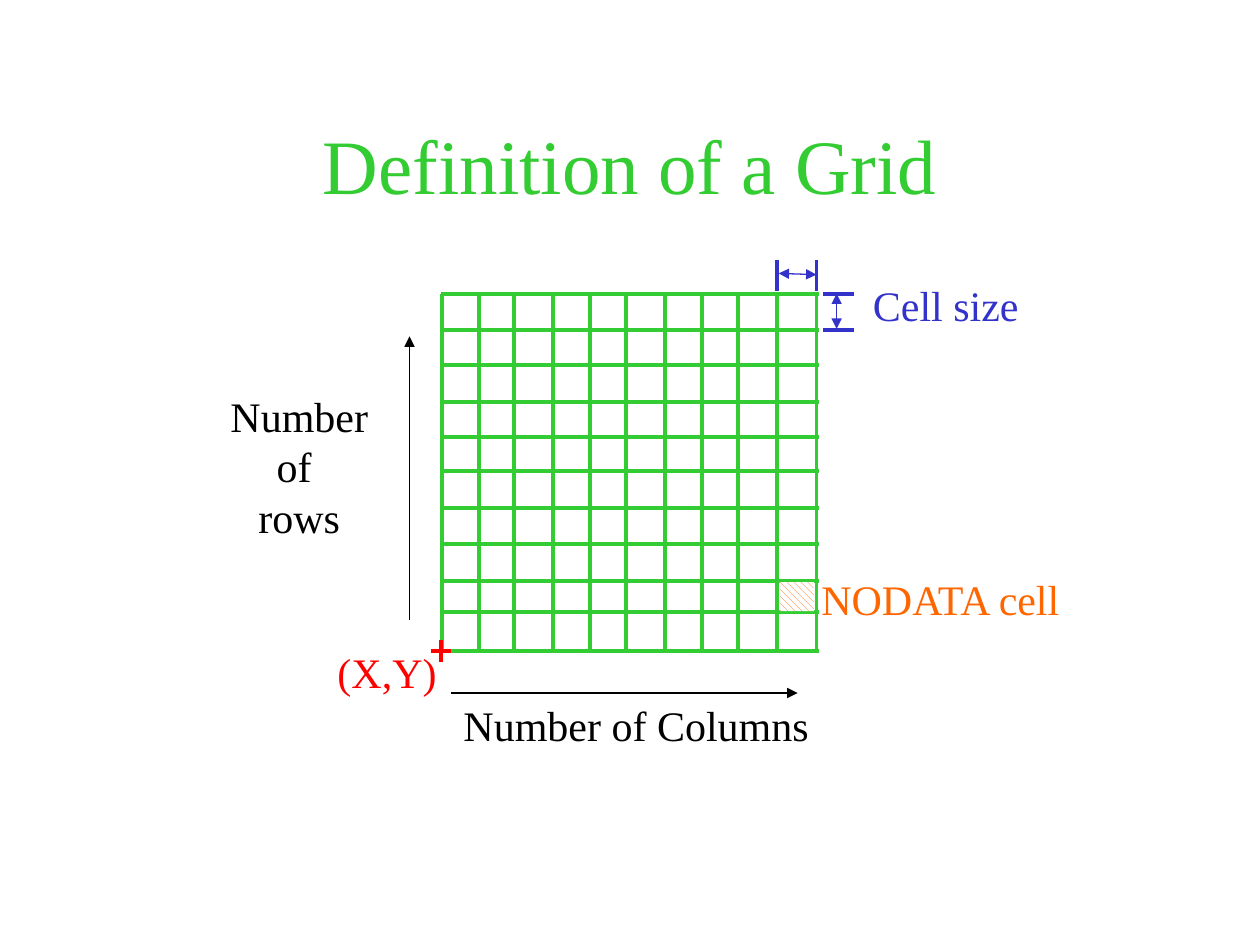
from dataclasses import dataclass

from lxml.etree import SubElement
from pptx import Presentation
from pptx.dml.color import RGBColor as RGB
from pptx.enum.dml import MSO_PATTERN as PATTERN
from pptx.enum.shapes import MSO_CONNECTOR as CONNECTOR, MSO_SHAPE as SHAPE
from pptx.enum.text import MSO_ANCHOR as ANCHOR, MSO_AUTO_SIZE as AUTO, PP_ALIGN as ALIGN
from pptx.oxml.ns import qn
from pptx.util import Inches, Pt


@dataclass(frozen=True)
class Theme:
    font: str = "Times New Roman"
    title_size: int = 44
    label_size: int = 24
    thick: float = 2.25
    thin: float = 0.75
    green: RGB = RGB(0x33, 0xCC, 0x33)
    blue: RGB = RGB(0x33, 0x33, 0xCC)
    red: RGB = RGB(0xFF, 0x00, 0x00)
    orange: RGB = RGB(0xFF, 0x66, 0x00)
    black: RGB = RGB(0x00, 0x00, 0x00)
    white: RGB = RGB(0xFF, 0xFF, 0xFF)


THEME = Theme()
ROWS = (2.33, 2.62, 2.9, 3.19, 3.47, 3.74, 4.03, 4.32, 4.61, 4.86, 5.17)
COLUMNS = (3.51, 3.8, 4.08, 4.39, 4.68, 4.97, 5.28, 5.57, 5.86, 6.17, 6.48)


def add_line(s, start, end, color, width=THEME.thick, arrows=()):
    points = [Inches(v) for v in (*start, *end)]
    line = s.shapes.add_connector(CONNECTOR.STRAIGHT, *points)
    line.line.color.rgb = color
    line.line.width = Pt(width)
    ln = line.line._get_or_add_ln()
    for arrow in arrows:
        SubElement(ln, qn(f"a:{arrow}"), type="triangle")
    SubElement(line._element.spPr, qn("a:effectLst"))


def add_text(s, box, lines, color, size=THEME.label_size, align=ALIGN.LEFT):
    tf = s.shapes.add_textbox(*map(Inches, box)).text_frame
    tf.word_wrap = False
    tf.auto_size = AUTO.SHAPE_TO_FIT_TEXT
    for i, text in enumerate(lines):
        p = tf.add_paragraph() if i else tf.paragraphs[0]
        p.alignment = align
        r = p.add_run()
        r.text = text
        r.font.name = THEME.font
        r.font.size = Pt(size)
        r.font.color.rgb = color
    return tf


def add_title(s, text):
    tf = add_text(s, (0.75, 0.67, 8.5, 1.25), [text], THEME.green,
                  THEME.title_size, ALIGN.CENTER)
    tf.auto_size = AUTO.NONE
    tf.word_wrap = True
    tf.vertical_anchor = ANCHOR.MIDDLE


def add_grid(s):
    for y in ROWS:
        add_line(s, (3.5, y), (6.5, y), THEME.green)
    for x in COLUMNS:
        add_line(s, (x, ROWS[0]), (x, ROWS[-1]), THEME.green)


def add_counts(s):
    add_line(s, (3.25, 4.92), (3.25, 2.67), THEME.black, THEME.thin, ["tailEnd"])
    add_text(s, (1.73, 3.05, 1.29, 1.3), ["Number", "of ", "rows"],
             THEME.black, align=ALIGN.CENTER)
    add_line(s, (3.58, 5.5), (6.33, 5.5), THEME.black, THEME.thin, ["tailEnd"])
    add_text(s, (3.58, 5.5, 2.94, 0.5), ["Number of Columns"], THEME.black)


def add_origin(s):
    add_line(s, (3.5, 5.08), (3.5, 5.25), THEME.red)
    add_line(s, (3.42, 5.17), (3.58, 5.17), THEME.red)
    add_text(s, (2.58, 5.08, 0.99, 0.5), ["(X,Y)"], THEME.red)


def add_cell_size(s):
    both = ["headEnd", "tailEnd"]
    for y in ROWS[:2]:
        add_line(s, (6.53, y), (6.78, y), THEME.blue)
    for x in COLUMNS[-2:]:
        add_line(s, (x, 2.31), (x, 2.06), THEME.blue)
    add_line(s, (6.18, 2.17), (6.48, 2.18), THEME.blue, THEME.thin, both)
    add_line(s, (6.64, 2.61), (6.64, 2.33), THEME.blue, THEME.thin, both)
    add_text(s, (6.83, 2.17, 1.36, 0.5), ["Cell size"], THEME.blue)


def add_nodata_cell(s):
    box = map(Inches, (6.19, 4.62, 0.27, 0.23))
    sp = s.shapes.add_shape(SHAPE.RECTANGLE, *box)
    sp.shadow.inherit = False
    sp.line.fill.background()
    sp.fill.patterned()
    sp.fill.pattern = PATTERN.WIDE_DOWNWARD_DIAGONAL
    sp.fill.fore_color.rgb = THEME.orange
    sp.fill.back_color.rgb = THEME.white
    add_text(s, (6.42, 4.5, 2.17, 0.5), ["NODATA cell"], THEME.orange)


def main():
    prs = Presentation()
    prs.slide_width, prs.slide_height = Inches(10), Inches(7.5)
    s = prs.slides.add_slide(prs.slide_layouts[6])
    add_title(s, "Definition of a Grid")
    add_grid(s)
    add_counts(s)
    add_origin(s)
    add_cell_size(s)
    add_nodata_cell(s)
    prs.save("out.pptx")


if __name__ == "__main__":
    main()
